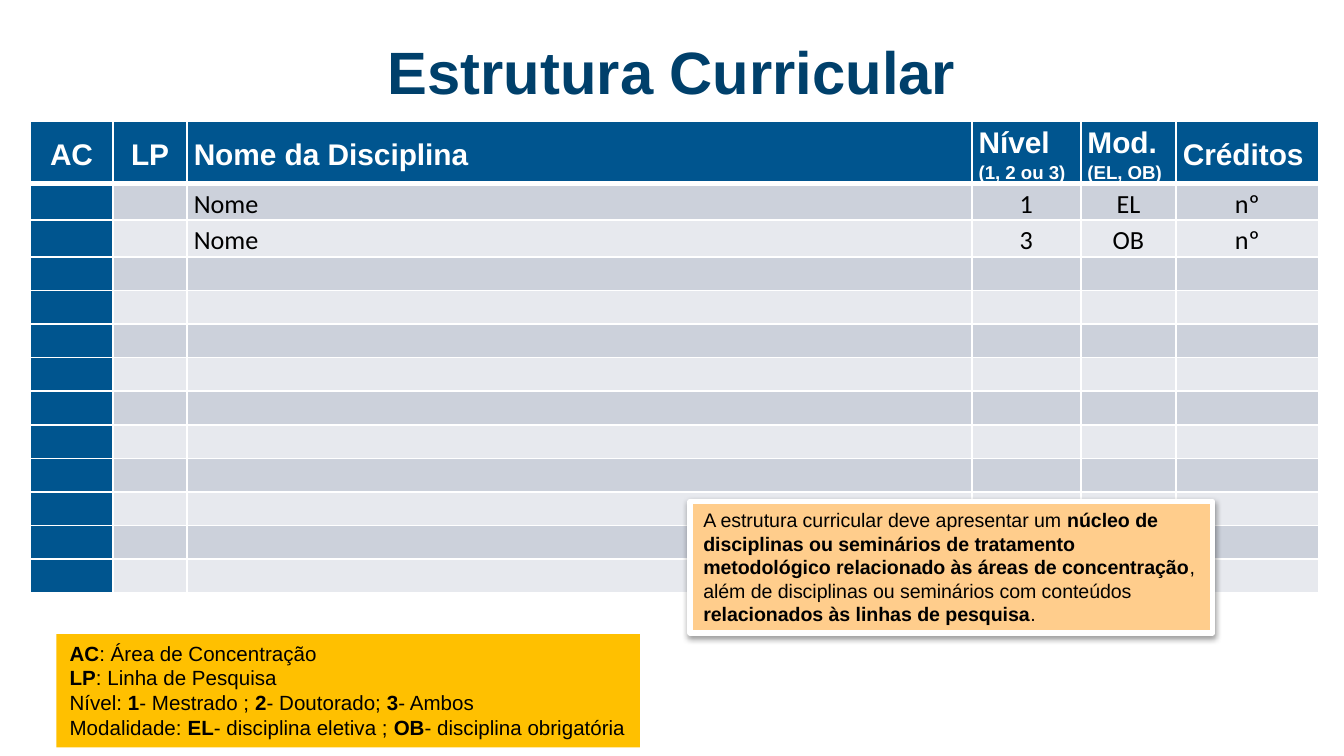
import pptx
import pptx.dml.color
import pptx.enum.shapes
import pptx.enum.text
import pptx.oxml
import pptx.util
from lxml import etree

Pt = pptx.util.Pt
ALIGN = pptx.enum.text.PP_ALIGN
ANCHOR = pptx.enum.text.MSO_ANCHOR
NAMESPACE = "http://schemas.openxmlformats.org/drawingml/2006/main"

BLUE, WHITE, BLACK = "00558F", "FFFFFF", "000000"
BANDS = ["CCD1DB", "E7E9EE"]
COLUMN_WIDTHS = [44.64, 39.6, 420.48, 58.32, 51.12, 76.32]
HEADERS = ["AC", "LP", "Nome da Disciplina", "Nível |(1, 2 ou 3)",
           "Mod. |(EL, OB)", "Créditos"]
COURSES = [["", "", "Nome", "1", "EL", "nº"], ["", "", "Nome", "3", "OB", "nº"]]
COURSE_ROWS = 12

# Asterisks enclose bold words.
LEGEND = [
    "*AC*: Área de Concentração",
    "*LP*: Linha de Pesquisa",
    "Nível: *1*- Mestrado ; *2*- Doutorado; *3*- Ambos",
    "Modalidade: *EL*- disciplina eletiva ; *OB*- disciplina obrigatória",
]
NOTE = [
    "A estrutura curricular deve apresentar um *núcleo de disciplinas ou "
    "seminários de tratamento metodológico relacionado às áreas de "
    "concentração*, além de disciplinas ou seminários com conteúdos "
    "*relacionados às linhas de pesquisa*.",
]


def color(value):
    return pptx.dml.color.RGBColor.from_string(value)


def paint(target, value):
    target.fill.solid()
    target.fill.fore_color.rgb = color(value)


def add_text(para, text, size=11, font="Arial", ink=BLACK, bold=False):
    span = para.add_run()
    span.text = text
    span.font.size = Pt(size)
    span.font.name = font
    span.font.bold = bold
    span.font.color.rgb = color(ink)


def add_title(page, text, left, top, width, height):
    title = page.shapes.title
    title.left, title.top, title.width, title.height = map(
        Pt, (left, top, width, height))
    frame = title.text_frame
    frame.vertical_anchor = ANCHOR.BOTTOM
    frame.margin_left = frame.margin_right = Pt(7.2)
    frame.margin_top = frame.margin_bottom = Pt(7.2)
    para = frame.paragraphs[0]
    para.alignment = ALIGN.CENTER
    add_text(para, text, size=32, ink="00406B", bold=True)


def set_borders(cell, top, bottom):
    widths = {"lnL": 1, "lnR": 1, "lnT": top, "lnB": bottom}
    properties = cell._tc.get_or_add_tcPr()
    for position, (side, width) in enumerate(widths.items()):
        properties.insert(position, pptx.oxml.parse_xml(
            f'<a:{side} xmlns:a="{NAMESPACE}" w="{Pt(width)}"><a:solidFill>'
            f'<a:srgbClr val="{WHITE}"/></a:solidFill></a:{side}>'))


def fill_cell(cell, text, row, column):
    header = row == 0
    paint(cell, BLUE if header or column == 0 else BANDS[(row - 1) % 2])
    set_borders(cell, top=3 if row == 1 else 1, bottom=3 if header else 1)
    cell.margin_left = cell.margin_right = Pt(3.6)
    cell.margin_top = cell.margin_bottom = 0
    cell.vertical_anchor = ANCHOR.MIDDLE
    para = cell.text_frame.paragraphs[0]
    if not text:
        # A small end mark keeps an empty row from growing.
        etree.SubElement(para._p, f"{{{NAMESPACE}}}endParaRPr", sz="1000")
        return
    para.line_spacing = 1.15
    centered = column < 2 if header else column > 2
    para.alignment = ALIGN.CENTER if centered else ALIGN.LEFT
    if header:
        for part, size in zip(text.split("|"), (16, 10)):
            add_text(para, part, size=size, ink=WHITE, bold=True)
    else:
        add_text(para, text, size=14, font="Calibri")


def add_course_table(page, left, top, header_height=29, row_height=18):
    empty = [[""] * len(HEADERS)] * (COURSE_ROWS - len(COURSES))
    rows = [HEADERS] + COURSES + empty
    table = page.shapes.add_table(
        len(rows), len(HEADERS), Pt(left), Pt(top), Pt(sum(COLUMN_WIDTHS)),
        Pt(header_height + COURSE_ROWS * row_height)).table
    for column, width in zip(table.columns, COLUMN_WIDTHS):
        column.width = Pt(width)
    for row_index, texts in enumerate(rows):
        table.rows[row_index].height = Pt(row_height if row_index else header_height)
        for column_index, text in enumerate(texts):
            fill_cell(table.cell(row_index, column_index), text,
                      row_index, column_index)


def add_panel(page, lines, left, top, width, height, fill, size):
    """Add a filled box with one left-aligned paragraph for each line."""
    box = page.shapes.add_shape(
        pptx.enum.shapes.MSO_SHAPE.RECTANGLE,
        Pt(left), Pt(top), Pt(width), Pt(height))
    box.shadow.inherit = False
    paint(box, fill)
    box.line.fill.background()
    frame = box.text_frame
    frame.word_wrap = True
    frame.auto_size = pptx.enum.text.MSO_AUTO_SIZE.SHAPE_TO_FIT_TEXT
    frame.vertical_anchor = ANCHOR.TOP
    for index, line in enumerate(lines):
        para = frame.add_paragraph() if index else frame.paragraphs[0]
        para.alignment = ALIGN.LEFT
        for position, part in enumerate(line.split("*")):
            if part:
                add_text(para, part, size=size, bold=position % 2 == 1)
    return box


def add_framed_note(page, lines, left, top, width, height):
    box = add_panel(page, lines, left, top, width, height, "FFCD8C", 10.5)
    box.line.color.rgb = color(WHITE)
    box.line.width = Pt(3)
    effects = box._element.spPr.find(f"{{{NAMESPACE}}}effectLst")
    effects.append(pptx.oxml.parse_xml(
        f'<a:outerShdw xmlns:a="{NAMESPACE}" blurRad="{Pt(3.1)}" '
        f'dist="{Pt(1.6)}" dir="5400000" rotWithShape="0">'
        f'<a:srgbClr val="{BLACK}"><a:alpha val="38000"/></a:srgbClr>'
        '</a:outerShdw>'))


def main():
    deck = pptx.Presentation()
    deck.slide_width, deck.slide_height = Pt(720), Pt(405)
    page = deck.slides.add_slide(deck.slide_layouts.get_by_name("Title Only"))
    add_title(page, "Estrutura Curricular", 20.5, 22.3, 679, 41.8)
    add_course_table(page, 16, 65)
    add_panel(page, LEGEND, 30.2, 339.8, 312.7, 60.6, "FFC000", 11)
    add_framed_note(page, NOTE, 369.7, 268.7, 280, 70.4)
    deck.save("out.pptx")


if __name__ == "__main__":
    main()
